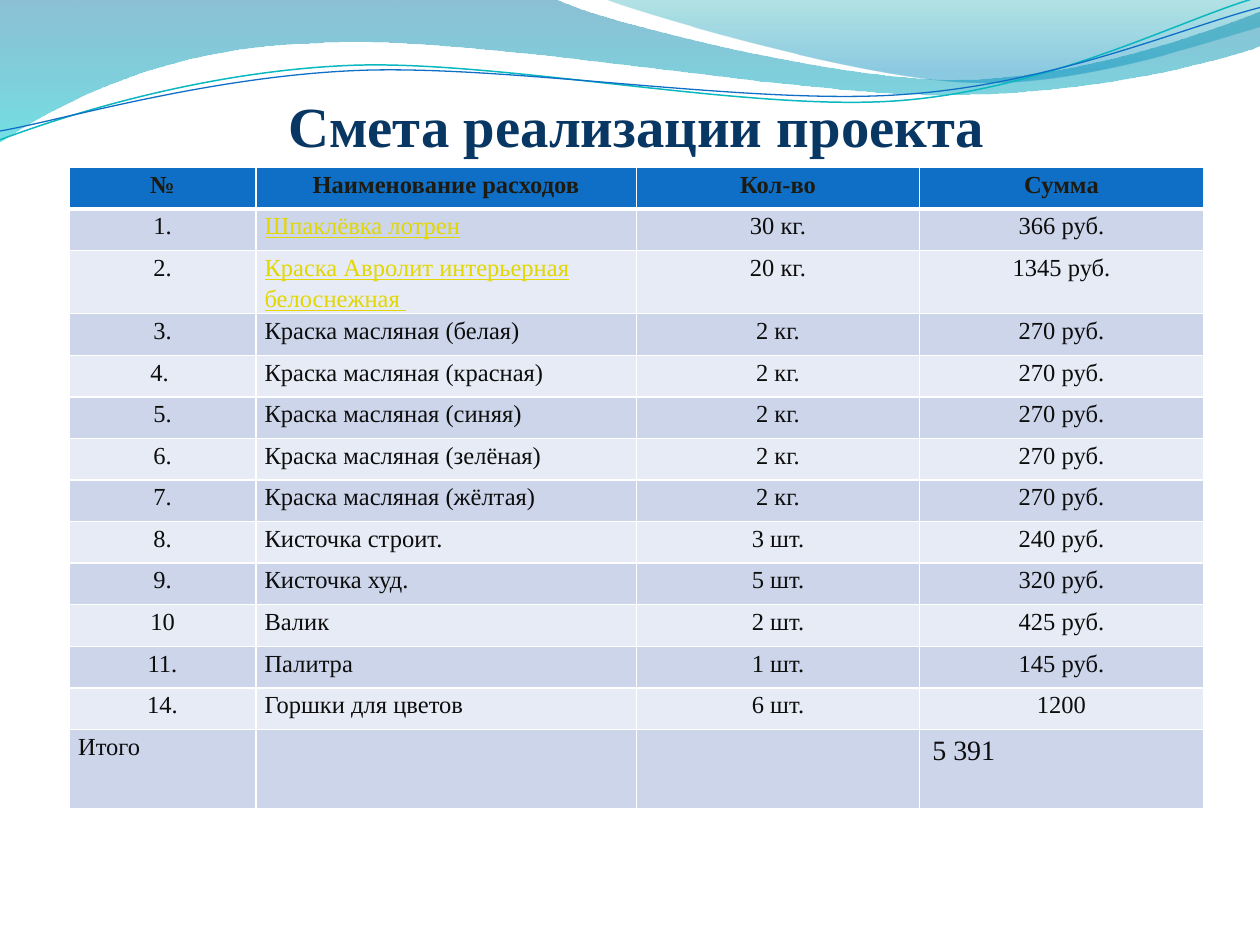
from lxml import etree
from pptx import Presentation
from pptx.dml.color import RGBColor
from pptx.enum.text import MSO_ANCHOR, MSO_AUTO_SIZE, PP_ALIGN
from pptx.oxml.ns import qn
from pptx.util import Inches, Pt

CENTER, LEFT = PP_ALIGN.CENTER, PP_ALIGN.LEFT
SERIF = "Times New Roman"
DARK, LINK = "0D0D0D", "E2D700"
HEAD_FILL, BANDS = "0F6FC6", ("E7EBF5", "CCD5EA")
UNITS = 100  # outline units per inch; the builder keeps whole units only

# Content
TITLE = "Смета реализации проекта"
HEADER = ("№", "Наименование расходов", "Кол-во", "Сумма")
EXPENSES = [
    ("1.", "Шпаклёвка лотрен", "30 кг.", "366 руб."),
    ("2.", "Краска Авролит интерьерная белоснежная ", "20 кг.", "1345 руб."),
    ("3.", "Краска масляная (белая)", "2 кг.", "270 руб."),
    ("4. ", "Краска масляная (красная)", "2 кг.", "270 руб."),
    ("5.", "Краска масляная (синяя)", "2 кг.", "270 руб."),
    ("6.", "Краска масляная (зелёная)", "2 кг.", "270 руб."),
    ("7.", "Краска масляная (жёлтая)", "2 кг.", "270 руб."),
    ("8.", "Кисточка строит.", "3 шт.", "240 руб."),
    ("9.", "Кисточка худ.", "5 шт.", "320 руб."),
    ("10", "Валик", "2 шт.", "425 руб."),
    ("11.", "Палитра", "1 шт.", "145 руб."),
    ("14.", "Горшки для цветов", "6 шт.", "1200"),
]
TOTAL = ("Итого", "", "", "5 391")
LINKED_ROWS = (1, 2)
COL_WIDTHS = (1.48, 3.02, 2.25, 2.25)
ROW_HEIGHT, TALL_ROWS = 0.33, {2: 0.5, 13: 0.63}

# Waves: start point, then segments of one point (line) or three (curve)
BANNERS = [
    ((0, 0), [
        [(4.4, -0.01)],
        [(4.76, 0.17), (6.64, 0.63), (7.58, 0.63)],
        [(8.53, 0.63), (9.58, 0.26), (10, 0.09)],
        [(10.01, 0.36)],
        [(9.83, 0.44), (8.7, 0.76), (7.46, 0.75)],
        [(6.22, 0.75), (3.82, 0.28), (2.57, 0.34)],
        [(1.29, 0.36), (0.46, 0.83), (-0.01, 1.13)],
    ], [(0, "0074A1", 45), (1, "00C6CF", 55)]),
    ((4.79, -0.01), [
        [(5.09, 0.11), (6.82, 0.62), (7.69, 0.65)],
        [(8.56, 0.69), (9.61, 0.32), (10, 0.21)],
        [(10, 0)],
    ], [(0, "00A1A9", 30), (0.8, "008BBF", 45)]),
]
RIBBONS = [
    ((0, 1.11), [
        [(0.48, 0.93), (1.58, 0.57), (2.77, 0.52)],
        [(3.95, 0.47), (5.93, 0.89), (7.13, 0.8)],
        [(8.33, 0.71), (9.38, 0.15), (9.98, -0.02)],
    ], "0AB8BF", 0.85),
    ((0, 1.04), [
        [(0.47, 0.96), (1.64, 0.61), (2.83, 0.56)],
        [(4.03, 0.51), (5.97, 0.84), (7.17, 0.75)],
        [(8.36, 0.67), (9.41, 0.21), (10, 0.06)],
    ], "0F6FC6", 0.75),
]


def rgb(value):
    return RGBColor.from_string(value)


def add_wave(s, start, segments, close):
    """Draw an outline, turning each three-point segment into a curve."""
    points = [(x * UNITS, y * UNITS)
              for x, y in [start, *(pt for seg in segments for pt in seg)]]
    builder = s.shapes.build_freeform(*points[0], scale=Inches(1) / UNITS)
    builder.add_line_segments(points[1:], close=close)
    sp = builder.convert_to_shape()
    sp.shadow.inherit = False
    steps = iter(list(sp.element.iter(qn("a:lnTo"))))
    for seg in segments:
        nodes = [next(steps) for _ in seg]
        if len(nodes) == 3:
            curve = etree.Element(qn("a:cubicBezTo"))
            nodes[0].addprevious(curve)
            for node in nodes:
                curve.append(node[0])
                node.getparent().remove(node)
    return sp


def fill_gradient(sp, stops):
    sp.fill.gradient()
    sp.fill.gradient_angle = 270
    nodes = sp.element.iter(qn("a:gs"))
    for stop, node, (position, color, opacity) in zip(
            sp.fill.gradient_stops, nodes, stops):
        stop.position = position
        stop.color.rgb = rgb(color)
        etree.SubElement(node[0], qn("a:alpha"), val=str(opacity * 1000))


def write(tf, text, color, para=None, **font):
    p = tf.paragraphs[0]
    for name, value in (para or {}).items():
        setattr(p, name, value)
    r = p.add_run()
    r.text = text
    r.font.name = SERIF
    r.font.color.rgb = rgb(color)
    for name, value in font.items():
        setattr(r.font, name, value)


def rule_below(cell, color, width):
    ln = etree.Element(qn("a:lnB"), w=str(Pt(width)))
    fill = etree.SubElement(ln, qn("a:solidFill"))
    etree.SubElement(fill, qn("a:srgbClr"), val=color)
    cell._tc.get_or_add_tcPr().insert(0, ln)


def fill_cell(cell, row, col, text, last):
    cell.fill.solid()
    cell.fill.fore_color.rgb = rgb(BANDS[row % 2] if row else HEAD_FILL)
    if row == 0:
        rule_below(cell, "FFFFFF", 3)
    if not text:
        return
    if row == last and col == 3:
        write(cell.text_frame, text, DARK, size=Pt(16), bold=False)
        return
    cell.margin_left = cell.margin_right = Inches(0.07)
    cell.margin_top = cell.margin_bottom = 0
    linked = col == 1 and row in LINKED_ROWS
    left = row == last or (col == 1 and row > 0)
    para = {"alignment": LEFT if left else CENTER, "line_spacing": 1.15,
            "space_before" if linked else "space_after": Pt(10)}
    color = LINK if linked else DARK if row else "1D1B11"
    write(cell.text_frame, text, color, para,
          size=Pt(14), bold=row == 0, underline=linked)


def main():
    prs = Presentation()
    prs.slide_width, prs.slide_height = Inches(10), Inches(7.5)
    s = prs.slides.add_slide(prs.slide_layouts[5])

    # Wave decoration
    for start, segments, stops in BANNERS:
        sp = add_wave(s, start, segments, True)
        fill_gradient(sp, stops)
        sp.line.fill.background()
    for start, segments, color, width in RIBBONS:
        sp = add_wave(s, start, segments, False)
        sp.fill.background()
        sp.line.color.rgb = rgb(color)
        sp.line.width = Pt(width)

    # Title, in front of the waves
    title = s.shapes.title
    s.shapes.element.append(title.element)
    box = {"left": 0.55, "top": 0.55, "width": 9, "height": 0.71}
    for name, value in box.items():
        setattr(title, name, Inches(value))
    tf = title.text_frame
    frame = {"auto_size": MSO_AUTO_SIZE.NONE, "word_wrap": True,
             "vertical_anchor": MSO_ANCHOR.BOTTOM, "margin_left": 0,
             "margin_right": 0, "margin_top": Inches(0.05), "margin_bottom": 0}
    for name, value in frame.items():
        setattr(tf, name, value)
    write(tf, TITLE, "083763", {"alignment": CENTER}, size=Pt(32.4), bold=True)

    # Budget table
    rows = [HEADER, *EXPENSES, TOTAL]
    heights = [TALL_ROWS.get(i, ROW_HEIGHT) for i in range(len(rows))]
    table = s.shapes.add_table(
        len(rows), len(HEADER), Inches(0.55), Inches(1.33),
        Inches(sum(COL_WIDTHS)), Inches(sum(heights))).table
    for column, width in zip(table.columns, COL_WIDTHS):
        column.width = Inches(width)
    for i, (row, height) in enumerate(zip(rows, heights)):
        table.rows[i].height = Inches(height)
        for j, text in enumerate(row):
            fill_cell(table.cell(i, j), i, j, text, len(rows) - 1)

    prs.save("out.pptx")


if __name__ == "__main__":
    main()
